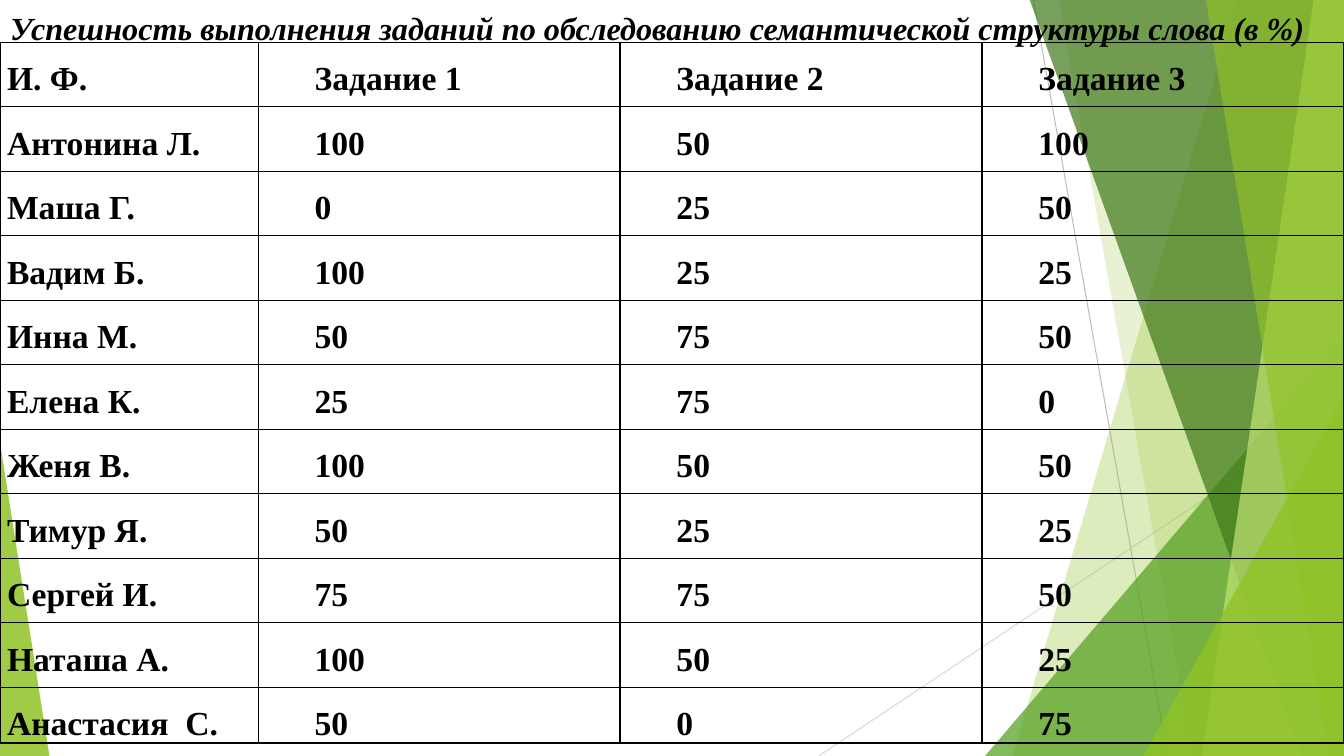
from dataclasses import dataclass

from lxml import etree
from pptx import Presentation
from pptx import util as u
from pptx.dml.color import RGBColor
from pptx.enum import shapes, text
from pptx.oxml import ns
from pptx.util import Inches


@dataclass(frozen=True)
class Theme:
    font: str = "Times New Roman"
    title_size: float = 23
    table_size: float = 24
    ink: str = "000000"
    lime: str = "90C226"
    pale_lime: str = "C0E474"
    green: str = "54A021"
    dark_green: str = "3F7819"
    ray: str = "BFBFBF"
    faint_ray: str = "D9D9D9"


THEME = Theme()
WIDTH, HEIGHT = 13.33, 7.5
TITLE = "Успешность выполнения заданий по обследованию семантической структуры слова (в %)"
HEADER = ("И. Ф.", "Задание 1", "Задание 2", "Задание 3")
RESULTS = [
    ("Антонина Л.", 100, 50, 100),
    ("Маша Г.", 0, 25, 50),
    ("Вадим Б.", 100, 25, 25),
    ("Инна М.", 50, 75, 50),
    ("Елена К.", 25, 75, 0),
    ("Женя В.", 100, 50, 50),
    ("Тимур Я.", 50, 25, 25),
    ("Сергей И.", 75, 75, 50),
    ("Наташа А.", 100, 50, 25),
    ("Анастасия  С.", 50, 0, 75),
]
COLUMN_WIDTHS = (2.56, 3.59, 3.59, 3.59)
ROW_HEIGHT, LAST_ROW_HEIGHT = 0.64, 0.25
SCORE_INDENT = 0.49


def add_xml(parent, tag, **attributes):
    return etree.SubElement(parent, ns.qn(tag), attributes)


def write(frame, content, size, italic=False, spacing=None, indent=0):
    """Fill a text frame with one bold justified paragraph."""
    paragraph = frame.paragraphs[0]
    paragraph.alignment = text.PP_ALIGN.JUSTIFY
    paragraph.line_spacing = spacing
    if indent:
        properties = paragraph._p.get_or_add_pPr()
        properties.set("marL", "0")
        properties.set("indent", str(Inches(indent)))
    run = paragraph.add_run()
    run.text = str(content)
    run.font.name = THEME.font
    run.font.size = u.Pt(size)
    run.font.bold = True
    run.font.italic = italic
    run.font.color.rgb = RGBColor.from_string(THEME.ink)


def add_ray(slide, start, end, color):
    ray = slide.shapes.add_connector(
        shapes.MSO_CONNECTOR.STRAIGHT, *(Inches(v) for v in start + end))
    ray.line.color.rgb = RGBColor.from_string(color)
    ray.line.width = u.Pt(0.75)
    add_xml(ray._element.spPr, "a:effectLst")


def paint(facet, color, opacity):
    facet.shadow.inherit = False
    facet.line.fill.background()
    facet.fill.solid()
    facet.fill.fore_color.rgb = RGBColor.from_string(color)
    tint = facet._element.spPr.find(ns.qn("a:solidFill"))[0]
    add_xml(tint, "a:alpha", val=str(opacity * 1000))


def add_band(slide, top_x, bottom_x, color, opacity):
    """Full-height facet between a slanted left side and the slide's right edge."""
    top = -0.01
    corners = [(WIDTH, top), (WIDTH, HEIGHT), (bottom_x, HEIGHT)]
    outline = slide.shapes.build_freeform(Inches(top_x), Inches(top))
    outline.add_line_segments([(Inches(x), Inches(y)) for x, y in corners])
    paint(outline.convert_to_shape(), color, opacity)


def add_corner(slide, left, top, width, apex, color, opacity):
    """Triangle standing on the bottom edge; apex 0 is left, 1 is right."""
    corner = slide.shapes.add_shape(
        shapes.MSO_SHAPE.ISOSCELES_TRIANGLE,
        Inches(left), Inches(top), Inches(width), Inches(HEIGHT - top))
    corner.adjustments[0] = apex
    paint(corner, color, opacity)


def add_backdrop(slide):
    add_ray(slide, (10.25, 0), (11.58, HEIGHT), THEME.ray)
    add_ray(slide, (WIDTH, 4.03), (8.12, HEIGHT), THEME.faint_ray)
    add_band(slide, 12.28, 10.04, THEME.lime, 30)
    add_band(slide, 10.5, 11.83, THEME.lime, 20)
    add_corner(slide, 9.77, 3.33, 3.56, 1, THEME.green, 72)
    add_band(slide, 10.21, 12.91, THEME.dark_green, 70)
    add_band(slide, 13.03, 11.92, THEME.pale_lime, 70)
    add_band(slide, 11.96, 13.18, THEME.lime, 65)
    add_corner(slide, 11.34, 3.93, 1.99, 1, THEME.lime, 80)
    add_corner(slide, 0, 4.39, 0.49, 0, THEME.lime, 85)


def place_title(slide):
    title = slide.shapes.title
    title.left, title.top = Inches(0), Inches(0)
    title.width, title.height = Inches(WIDTH), Inches(0.54)
    frame = title.text_frame
    frame.word_wrap = True
    frame.auto_size = text.MSO_AUTO_SIZE.NONE
    frame.vertical_anchor = text.MSO_ANCHOR.MIDDLE
    write(frame, TITLE, THEME.title_size, italic=True)
    slide.shapes._spTree.append(title._element)  # bring in front of the backdrop


def format_cell(cell):
    cell.margin_left = cell.margin_right = Inches(0.07)
    cell.margin_top = cell.margin_bottom = Inches(0)
    properties = cell._tc.get_or_add_tcPr()
    for side in ("a:lnL", "a:lnR", "a:lnT", "a:lnB"):
        border = add_xml(properties, side, w=str(u.Pt(1)))
        add_xml(add_xml(border, "a:solidFill"), "a:srgbClr", val=THEME.ink)
    cell.fill.background()


def add_results(slide):
    rows = [HEADER, *RESULTS]
    table = slide.shapes.add_table(
        len(rows), len(HEADER), Inches(0), Inches(0.42),
        Inches(WIDTH), Inches(ROW_HEIGHT * len(RESULTS) + LAST_ROW_HEIGHT)).table
    table.first_row = table.horz_banding = False
    for column, width in zip(table.columns, COLUMN_WIDTHS):
        column.width = Inches(width)
    for row in table.rows:
        row.height = Inches(ROW_HEIGHT)
    table.rows[len(RESULTS)].height = Inches(LAST_ROW_HEIGHT)
    for r, entries in enumerate(rows):
        for c, entry in enumerate(entries):
            cell = table.cell(r, c)
            format_cell(cell)
            write(cell.text_frame, entry, THEME.table_size, spacing=1.5,
                  indent=SCORE_INDENT if c else 0)


def main():
    deck = Presentation()
    deck.slide_width, deck.slide_height = Inches(WIDTH), Inches(HEIGHT)
    slide = deck.slides.add_slide(deck.slide_layouts.get_by_name("Title Only"))
    add_backdrop(slide)
    place_title(slide)
    add_results(slide)
    deck.save("out.pptx")


if __name__ == "__main__":
    main()
